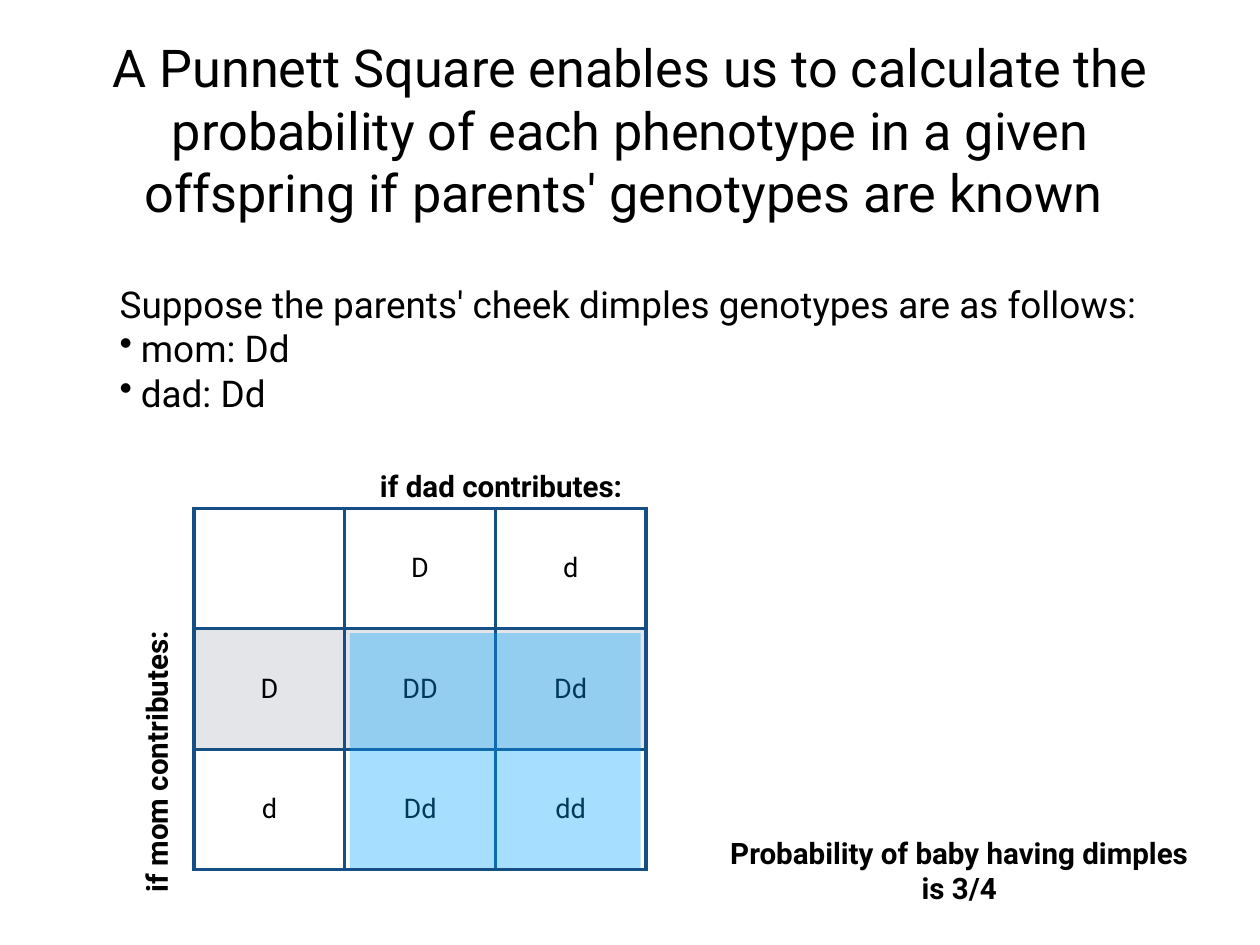
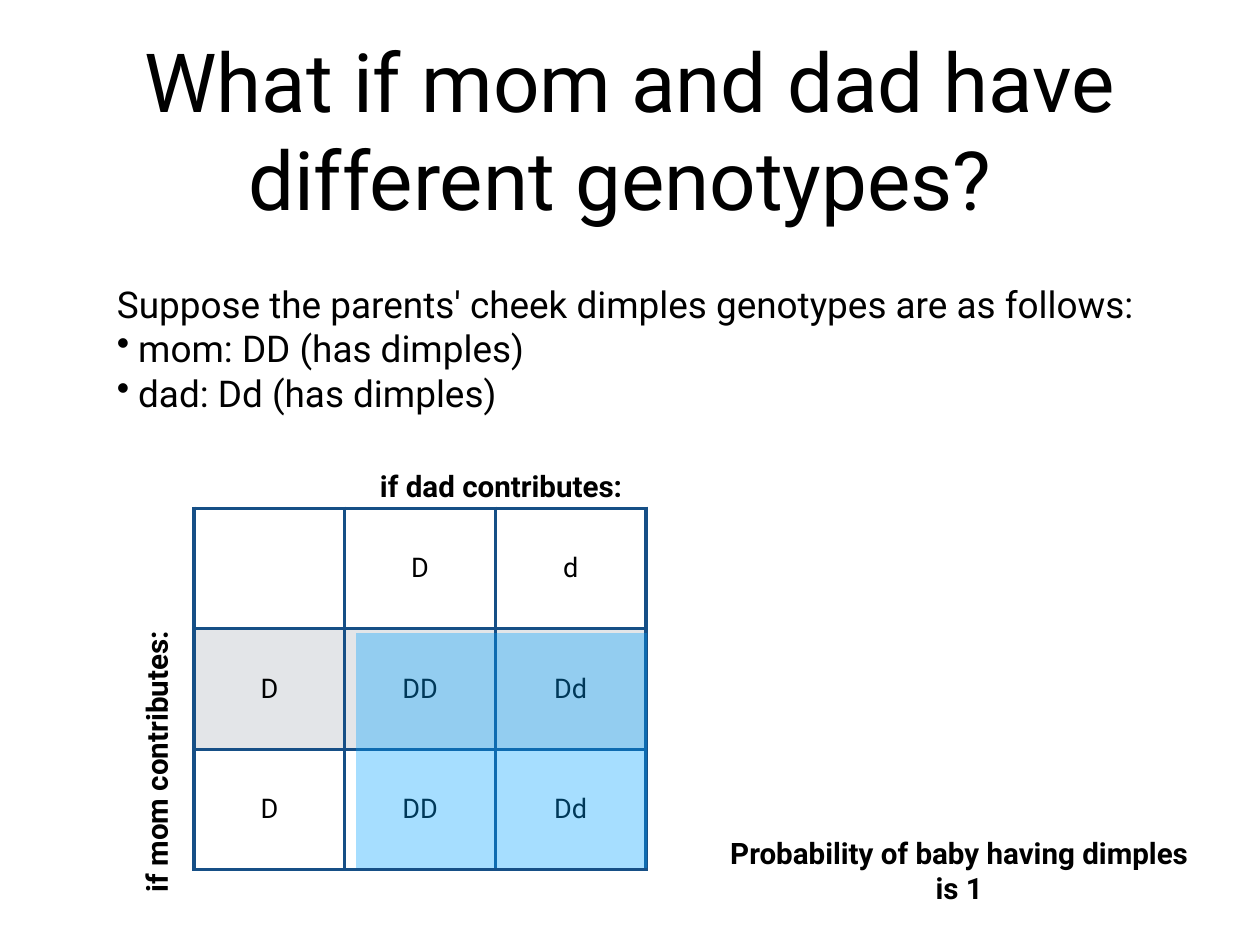
from lxml.etree import SubElement
from pptx import Presentation
from pptx.dml.color import RGBColor
from pptx.enum.shapes import MSO_SHAPE
from pptx.enum.text import MSO_ANCHOR, PP_ALIGN
from pptx.oxml.ns import qn
from pptx.util import Pt

PX = 9144
INSET = 6 * PX
FONT = "Roboto"
BLACK, WHITE, GRAY = "000000", "FFFFFF", "E3E5E8"
BORDER, HIGHLIGHT = "164F86", "00A2FF"
CELL = 136
COLUMN = 170
BULLET_INDENT = 24


def color(value):
    return RGBColor.from_string(value)


def add_text(slide, box, lines, size, bold=False, align=PP_ALIGN.CENTER, wrap=False):
    shape = slide.shapes.add_textbox(*[length * PX for length in box])
    frame = shape.text_frame
    frame.word_wrap = wrap
    frame.vertical_anchor = MSO_ANCHOR.MIDDLE
    frame.margin_left = frame.margin_right = INSET
    frame.margin_top = frame.margin_bottom = INSET
    frame.text = "\n".join(lines)
    for paragraph in frame.paragraphs:
        paragraph.alignment = align
        paragraph.font.name = FONT
        paragraph.font.size = Pt(size)
        paragraph.font.bold = bold
        paragraph.font.color.rgb = color(BLACK)
    return shape


slides = [
    {
        "title": "A Punnett Square enables us to calculate the probability of each "
                 "phenotype in a given offspring if parents' genotypes are known ",
        "title_size": 42.4,
        "mom": "Dd", "dad": "Dd", "note": "", "probability": "3/4",
        "body_left": 129, "body_width": 1289, "highlight_left": 395,
    },
    {
        "title": "What if mom and dad have different genotypes? ",
        "title_size": 66.4,
        "mom": "DD", "dad": "Dd", "note": " (has dimples)", "probability": "1",
        "body_left": 126, "body_width": 1189, "highlight_left": 402,
    },
]

presentation = Presentation()
presentation.slide_width = 1422 * PX
presentation.slide_height = 1067 * PX

for content in slides:
    slide = presentation.slides.add_slide(presentation.slide_layouts[6])
    mom, dad = content["mom"], content["dad"]

    add_text(slide, (104, 28, 1214, 236), [content["title"]], content["title_size"], wrap=True)

    rows = [["", *dad]]
    for allele in mom:
        rows.append([allele, *["".join(sorted(allele + other)) for other in dad]])
    table = slide.shapes.add_table(
        3, 3, 219 * PX, 574 * PX, 3 * COLUMN * PX, 3 * CELL * PX).table
    table.first_row = table.horz_banding = False
    for column in table.columns:
        column.width = COLUMN * PX
    for row_index, genotypes in enumerate(rows):
        table.rows[row_index].height = CELL * PX
        for column_index, genotype in enumerate(genotypes):
            cell = table.cell(row_index, column_index)
            cell.text = genotype
            cell.vertical_anchor = MSO_ANCHOR.MIDDLE
            cell.margin_left = cell.margin_right = INSET
            cell.margin_top = cell.margin_bottom = INSET
            paragraph = cell.text_frame.paragraphs[0]
            paragraph.alignment = PP_ALIGN.CENTER
            paragraph.font.name = FONT
            paragraph.font.size = Pt(22)
            paragraph.font.color.rgb = color(BLACK)
            properties = cell._tc.get_or_add_tcPr()
            for side in ("a:lnL", "a:lnR", "a:lnT", "a:lnB"):
                line = SubElement(properties, qn(side), w=str(Pt(3)))
                SubElement(SubElement(line, qn("a:solidFill")), qn("a:srgbClr"), val=BORDER)
            cell.fill.solid()
            cell.fill.fore_color.rgb = color(GRAY if row_index == 1 else WHITE)

    body = add_text(
        slide, (content["body_left"], 313, content["body_width"], 160),
        ["Suppose the parents' cheek dimples genotypes are as follows:",
         f"mom: {mom}{content['note']}",
         f"dad: {dad}{content['note']}"],
        30, align=PP_ALIGN.LEFT, wrap=True)
    body.fill.solid()
    body.fill.fore_color.rgb = color(WHITE)
    for paragraph in body.text_frame.paragraphs[1:]:
        properties = paragraph._p.get_or_add_pPr()
        properties.set("marL", str(BULLET_INDENT * PX))
        properties.set("indent", str(-BULLET_INDENT * PX))
        bullet = properties.makeelement(qn("a:buChar"), {"char": "•"})
        properties.insert(0, bullet)

    add_text(slide, (415, 523, 301, 50), ["if dad contributes:"], 24, bold=True)
    mom_label = add_text(slide, (15, 835, 322, 50), ["if mom contributes:"], 24, bold=True)
    mom_label.rotation = 270

    highlight = slide.shapes.add_shape(
        MSO_SHAPE.RECTANGLE, content["highlight_left"] * PX, 715 * PX, 328 * PX, 265 * PX)
    highlight.shadow.inherit = False
    highlight.line.fill.background()
    highlight.fill.solid()
    highlight.fill.fore_color.rgb = color(HIGHLIGHT)
    fill_color = highlight.fill._xPr.find(qn("a:solidFill")).find(qn("a:srgbClr"))
    SubElement(fill_color, qn("a:alpha"), val="35000")

    add_text(slide, (799, 937, 567, 91),
             ["Probability of baby having dimples", f"is {content['probability']}"],
             24, bold=True)

presentation.save("out.pptx")
